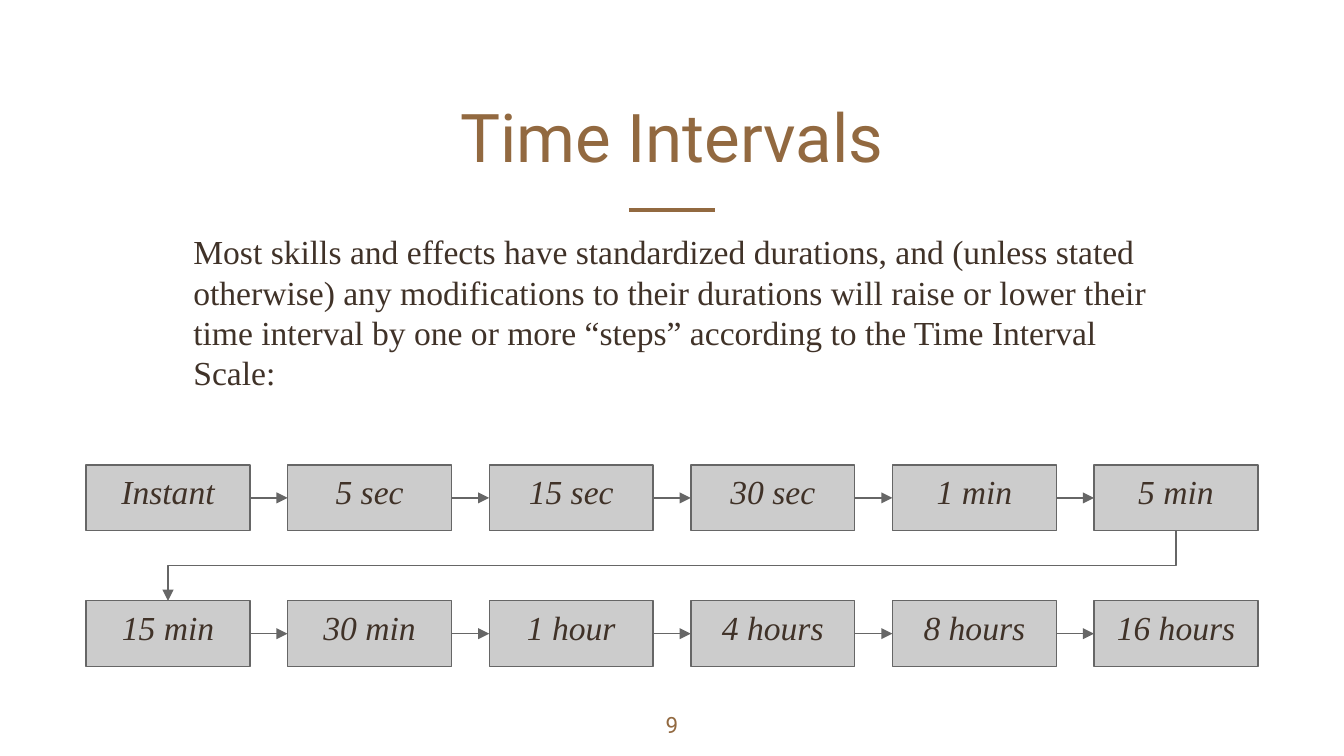
"""Builds the Time Intervals slide: a two-row scale of durations joined by arrows."""
from dataclasses import dataclass

from lxml import etree
from pptx import Presentation
from pptx import util as u
from pptx.dml.color import RGBColor
from pptx.enum import shapes, text
from pptx.oxml.ns import qn

COLORS = {"accent": "926940", "ink": "403228", "box": "CCCCCC", "edge": "666666"}
SERIF, SANS = "Times New Roman", "Roboto"
WIDTH = 10
HEIGHT = WIDTH * 9 / 16
SCALE = (
    ("Instant", "5 sec", "15 sec", "30 sec", "1 min", "5 min"),
    ("15 min", "30 min", "1 hour", "4 hours", "8 hours", "16 hours"),
)
GAP, BOX_WIDTH, BOX_HEIGHT = 0.28, 1.22, 0.49
PITCH = BOX_WIDTH + GAP
SPAN = PITCH * (len(SCALE[0]) - 1)
LEFT = (WIDTH - SPAN - BOX_WIDTH) / 2
ROW_TOPS = (3.46, 4.47)
INTRO = (
    "Most skills and effects have standardized durations, and (unless stated otherwise) "
    "any modifications to their durations will raise or lower their time interval by one "
    "or more “steps” according to the Time Interval Scale:"
)


@dataclass(frozen=True)
class TextStyle:
    size: int
    font: str
    color: str
    align: text.PP_ALIGN = text.PP_ALIGN.CENTER
    anchor: text.MSO_ANCHOR = text.MSO_ANCHOR.TOP
    italic: bool = False
    margins: tuple = (0.1, 0.1, 0.1, 0.1)


TITLE = TextStyle(36, SANS, "accent", anchor=text.MSO_ANCHOR.BOTTOM)
BODY = TextStyle(18, SERIF, "ink", align=text.PP_ALIGN.LEFT)
NUMBER = TextStyle(12, SANS, "accent")
STEP = TextStyle(18, SERIF, "ink", anchor=text.MSO_ANCHOR.MIDDLE, italic=True,
                 margins=(0, 0, 0, 0.1))


def color(name: str) -> RGBColor:
    return RGBColor.from_string(COLORS[name])


def inches(*lengths: float) -> list:
    return [u.Inches(length) for length in lengths]


def write(shape, words: str, style: TextStyle) -> None:
    frame = shape.text_frame
    frame.word_wrap = True
    frame.auto_size = text.MSO_AUTO_SIZE.NONE
    frame.vertical_anchor = style.anchor
    (frame.margin_left, frame.margin_top,
     frame.margin_right, frame.margin_bottom) = inches(*style.margins)
    frame.text = words
    paragraph = frame.paragraphs[0]
    paragraph.alignment = style.align
    font = paragraph.font
    font.size, font.name, font.italic = u.Pt(style.size), style.font, style.italic
    font.color.rgb = color(style.color)


def add_text(slide, box: tuple, words: str, style: TextStyle) -> None:
    write(slide.shapes.add_textbox(*inches(*box)), words, style)


def add_step(slide, column: int, row: int, label: str):
    shape = slide.shapes.add_shape(
        shapes.MSO_SHAPE.RECTANGLE,
        *inches(LEFT + column * PITCH, ROW_TOPS[row], BOX_WIDTH, BOX_HEIGHT))
    shape.shadow.inherit = False
    shape.fill.solid()
    shape.fill.fore_color.rgb = color("box")
    shape.line.color.rgb = color("edge")
    shape.line.width = u.Pt(0.75)
    write(shape, label, STEP)
    return shape


def add_line(slide, ends: tuple, line_color: str = "edge", weight: float = 0.75,
             arrow: bool = True, kind=shapes.MSO_CONNECTOR.STRAIGHT):
    connector = slide.shapes.add_connector(kind, *inches(*ends))
    connector.line.color.rgb = color(line_color)
    connector.line.width = u.Pt(weight)
    properties = connector._element.spPr
    if arrow:
        etree.SubElement(properties.find(qn("a:ln")), qn("a:tailEnd"), type="triangle")
    etree.SubElement(properties, qn("a:effectLst"))
    return connector


def add_row(slide, row: int) -> None:
    steps = [add_step(slide, column, row, label) for column, label in enumerate(SCALE[row])]
    middle = ROW_TOPS[row] + BOX_HEIGHT / 2
    for column, (start, end) in enumerate(zip(steps, steps[1:])):
        left = LEFT + column * PITCH
        arrow = add_line(slide, (left + BOX_WIDTH, middle, left + PITCH, middle))
        arrow.begin_connect(start, 3)
        arrow.end_connect(end, 1)


def add_row_return(slide) -> None:
    """Draws the elbow from the last step of row one to the first of row two, turned 90°."""
    start, end = ROW_TOPS[0] + BOX_HEIGHT, ROW_TOPS[1]
    drop = end - start
    center_x, center_y = WIDTH / 2, (start + end) / 2
    ends = (center_x - drop / 2, center_y - SPAN / 2, center_x + drop / 2, center_y + SPAN / 2)
    elbow = add_line(slide, ends, kind=shapes.MSO_CONNECTOR.ELBOW)
    elbow._element.spPr.find(qn("a:xfrm")).set("rot", "5400000")


def main() -> None:
    presentation = Presentation()
    presentation.slide_width, presentation.slide_height = inches(WIDTH, HEIGHT)
    slide = presentation.slides.add_slide(presentation.slide_layouts[5])
    title = slide.shapes.title
    title.left, title.top, title.width, title.height = inches(2.06, 0.47, 5.88, 0.94)
    write(title, "Time Intervals", TITLE)
    add_line(slide, (WIDTH / 2 - 0.32, 1.56, WIDTH / 2 + 0.32, 1.56), "accent", 2.25, arrow=False)
    add_text(slide, (1.34, 1.62, 7.32, 1.64), INTRO, BODY)
    add_text(slide, (4.7, 5.19, 0.6, 0.43), "9", NUMBER)
    for row in range(len(SCALE)):
        add_row(slide, row)
    add_row_return(slide)
    presentation.save("out.pptx")


if __name__ == "__main__":
    main()
